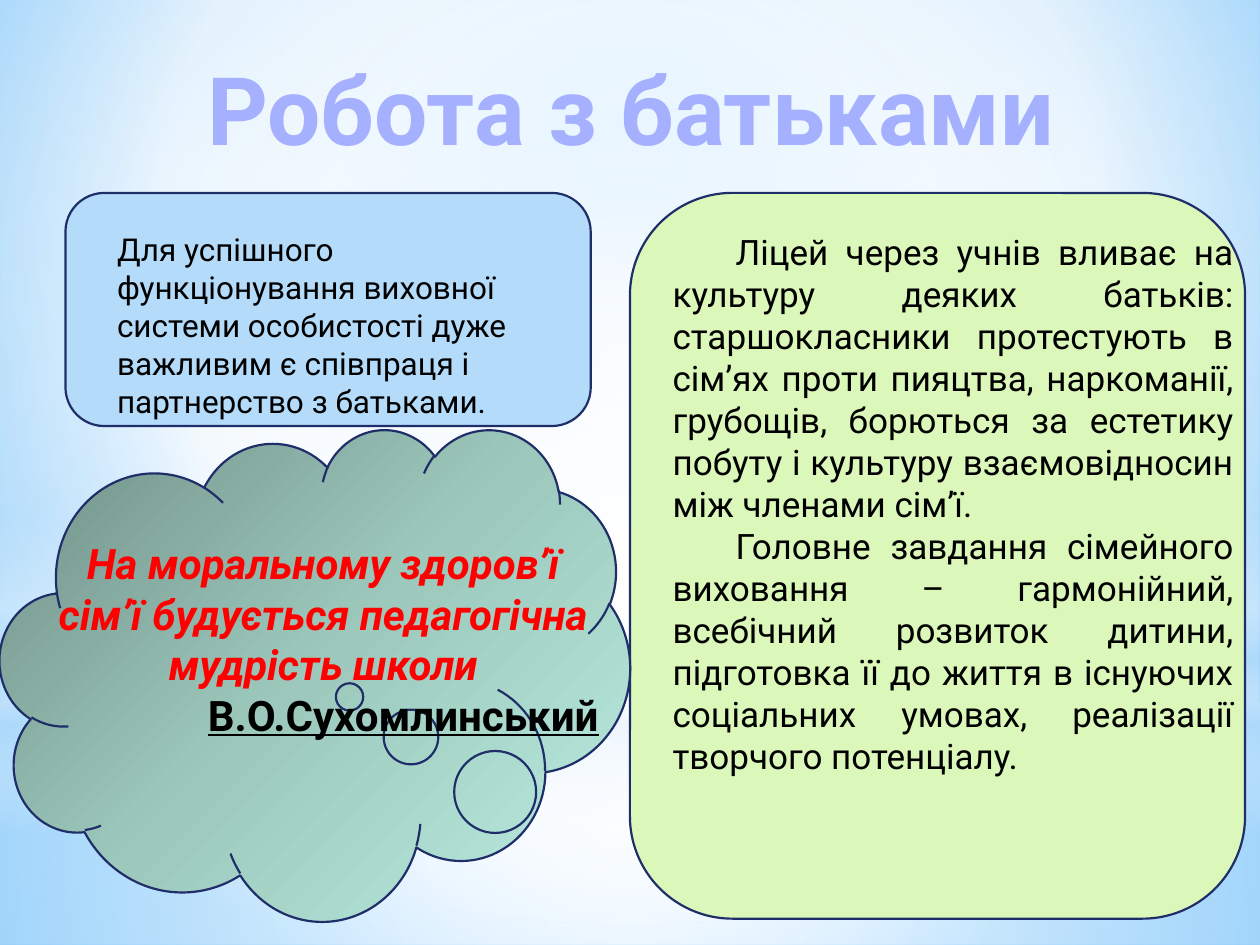
from lxml import etree
from pptx import Presentation
from pptx.dml.color import RGBColor
from pptx.enum.shapes import MSO_SHAPE as SHAPE
from pptx.enum.text import MSO_ANCHOR as ANCHOR, PP_ALIGN as ALIGN
from pptx.oxml.ns import qn
from pptx.util import Cm, Pt


def paint(fill, *stops, angle=0, center=None):
    """Fill with one hex colour, or with (position, hex, opacity) stops in percent."""
    fill.solid()
    if isinstance(stops[0], str):
        fill.fore_color.rgb = RGBColor.from_string(stops[0])
        return
    grad = etree.Element(qn("a:gradFill"), rotWithShape="1")
    gs_list = etree.SubElement(grad, qn("a:gsLst"))
    for pos, color, opacity in stops:
        gs = etree.SubElement(gs_list, qn("a:gs"), pos=str(pos * 1000))
        clr = etree.SubElement(gs, qn("a:srgbClr"), val=color)
        if opacity < 100:
            etree.SubElement(clr, qn("a:alpha"), val=str(opacity * 1000))
    if center:
        path = etree.SubElement(grad, qn("a:path"))
        path.set("path", "circle")
        rect = etree.SubElement(path, qn("a:fillToRect"))
        for side, value in zip("ltrb", center):
            rect.set(side, str(value * 1000))
    else:
        etree.SubElement(grad, qn("a:lin"), ang=str(angle * 60000), scaled="0")
    holder = fill._xPr
    holder.replace(holder.find(qn("a:solidFill")), grad)


def write(p, text, size, color="000000", align=ALIGN.LEFT, indent=0,
          bold=False, italic=False, underline=False):
    p.alignment = align
    if indent:
        pPr = p._p.get_or_add_pPr()
        pPr.set("marL", "0")
        pPr.set("indent", str(Cm(indent)))
    r = p.add_run()
    r.text = text
    r.font.name, r.font.size = "Roboto", Pt(size)
    r.font.bold, r.font.italic, r.font.underline = bold, italic, underline
    paint(r.font.fill, color)


prs = Presentation()
prs.slide_width, prs.slide_height = Cm(25.4), Cm(19.05)
s = prs.slides.add_slide(prs.slide_layouts[5])
WHITE, SKY, NAVY = "FFFFFF", "B4DCFA", "1F2E69"
MIDDLE = (50, 50, 50, 50)

# Background glow
paint(s.background.fill, (0, "9ED5FF", 100), (60, WHITE, 100), (100, "5BB9FF", 100),
      center=(20, 10, 20, 60))
glows = [
    (SHAPE.RECTANGLE, 14.17, 4.88, MIDDLE,
     [(0, WHITE, 91), (37, WHITE, 76), (100, SKY, 79)]),
    (SHAPE.RECTANGLE, 0, 14.17, MIDDLE,
     [(0, WHITE, 89), (48, WHITE, 62), (100, SKY, 79)]),
    (SHAPE.RECTANGLE, 10.46, 6.35, None,
     [(0, WHITE, 0), (29, WHITE, 30), (45, SKY, 40),
      (55, WHITE, 26), (65, SKY, 60), (100, WHITE, 0)]),
    (SHAPE.OVAL, 4.45, 14.17, MIDDLE, [(0, WHITE, 100), (56, WHITE, 0)]),
]
for kind, top, height, center, stops in glows:
    sp = s.shapes.add_shape(kind, 0, Cm(top), prs.slide_width, Cm(height))
    sp.shadow.inherit = False
    sp.line.fill.background()
    paint(sp.fill, *stops, angle=90, center=center)

# Title, moved in front of the glow
title = s.shapes.title
s.shapes._spTree.append(title._element)
title.left, title.top, title.width, title.height = Cm(3.84), Cm(0.91), Cm(17.75), Cm(2.57)
tf = title.text_frame
tf.word_wrap, tf.vertical_anchor = False, ANCHOR.TOP
write(tf.paragraphs[0], "Робота з батьками", 54, "A5B0FF", ALIGN.CENTER, bold=True)

# Panels and the thought cloud
panels = [
    (SHAPE.ROUNDED_RECTANGLE, (12.7, 3.89, 12.4, 14.63), ["DCF7BA"]),
    (SHAPE.ROUNDED_RECTANGLE, (1.32, 3.89, 10.59, 4.7), [SKY]),
    (SHAPE.CLOUD_CALLOUT, (0, 8.64, 12.7, 9.91),
     [(0, "6F8D85", 100), (50, "9DC9BD", 100), (100, "BBEFE1", 100)]),
]
for kind, box, stops in panels:
    sp = s.shapes.add_shape(kind, *map(Cm, box))
    sp.shadow.inherit = False
    sp.line.width = Pt(1.25)
    paint(sp.line.fill, NAVY)
    paint(sp.fill, *stops, angle=45)
    if kind == SHAPE.CLOUD_CALLOUT:
        sp.adjustments[0], sp.adjustments[1] = 0.055, 0.046

# Texts over the panels
body = dict(size=20, align=ALIGN.JUSTIFY, indent=1.27)
quote = dict(size=24, bold=True)
texts = [
    ((2.11, 4.52, 9.8, 4.11), [
        ("Для успішного функціонування виховної системи особистості дуже важливим "
         "є співпраця і партнерство з батьками.", dict(size=18))]),
    ((13.31, 4.52, 11.81, 13.08), [
        ("Ліцей через учнів вливає на культуру деяких батьків: старшокласники "
         "протестують в сім’ях проти пияцтва, наркоманії, грубощів, борються за "
         "естетику побуту і культуру взаємовідносин між членами сім’ї.", body),
        ("Головне завдання сімейного виховання – гармонійний, всебічний розвиток "
         "дитини, підготовка її до життя в існуючих соціальних умовах, реалізації "
         "творчого потенціалу.", body)]),
    ((0.71, 10.72, 11.61, 5.38), [
        ("На моральному здоров’ї сім’ї будується педагогічна мудрість школи",
         dict(quote, color="FF0000", align=ALIGN.CENTER, italic=True)),
        ("В.О.Сухомлинський", dict(quote, align=ALIGN.RIGHT, underline=True))]),
]
for box, paragraphs in texts:
    tf = s.shapes.add_textbox(*map(Cm, box)).text_frame
    tf.word_wrap = True
    for i, (text, style) in enumerate(paragraphs):
        p = tf.add_paragraph() if i else tf.paragraphs[0]
        write(p, text, **style)

prs.save("out.pptx")
